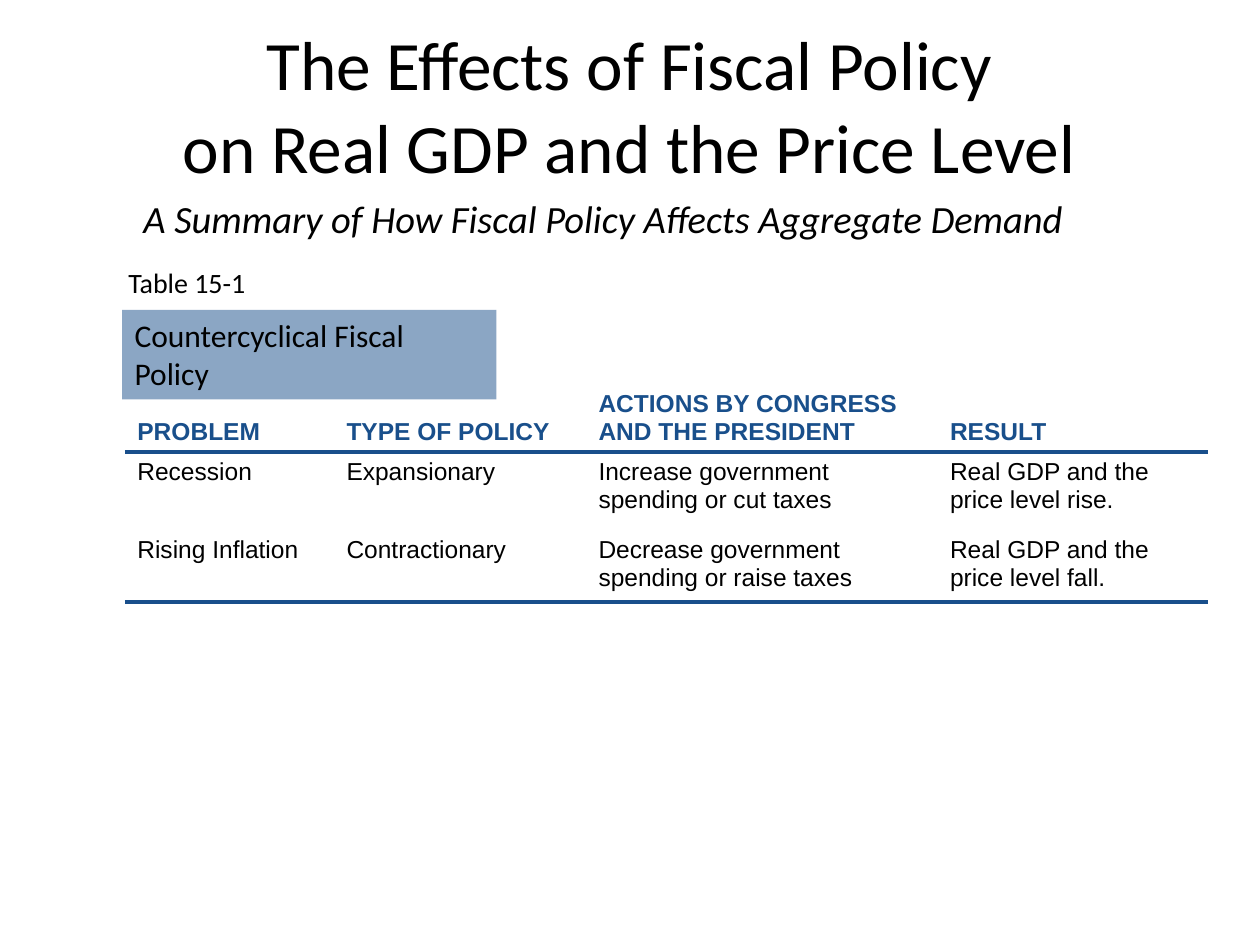
import pptx
import pptx.dml.color
import pptx.enum.shapes
import pptx.enum.text
import pptx.oxml
import pptx.oxml.ns
import pptx.util
from lxml import etree

Inches, Pt = pptx.util.Inches, pptx.util.Pt
ANCHOR = pptx.enum.text.MSO_ANCHOR
BLUE = pptx.dml.color.RGBColor(0x19, 0x4F, 0x8B)
BLACK = pptx.dml.color.RGBColor(0, 0, 0)

TITLE = "The Effects of Fiscal Policy\von Real GDP and the Price Level"
SUBTITLE = "A Summary of How Fiscal Policy Affects Aggregate Demand"
TABLE_NUMBER = "Table 15-1"
BANNER = "Countercyclical Fiscal Policy"
POLICIES = [
    ("PROBLEM", "TYPE OF POLICY", "ACTIONS BY CONGRESS AND THE PRESIDENT", "RESULT"),
    ("Recession", "Expansionary", "Increase government\vspending or cut taxes",
     "Real GDP and the price level rise."),
    ("Rising Inflation", "Contractionary", "Decrease government\vspending or raise taxes",
     "Real GDP and the price level fall."),
]
COLUMN_WIDTHS = (1.66, 2, 2.79, 2.15)
ROW_HEIGHTS = (0.56, 0.62, 0.57)
RULE_WIDTH = Pt(2.25)


def style_text(text_frame, size, name="Calibri", color=BLACK, bold=False, italic=False):
    for paragraph in text_frame.paragraphs:
        for run in paragraph.runs:
            font = run.font
            font.size, font.name = Pt(size), name
            font.bold, font.italic = bold, italic
            font.color.rgb = color


def add_text(slide, box, text, size, **style):
    shape = slide.shapes.add_textbox(*map(Inches, box))
    text_frame = shape.text_frame
    text_frame.word_wrap = True
    text_frame.text = text
    style_text(text_frame, size, **style)
    return text_frame


def add_banner(slide):
    shape = slide.shapes.add_shape(pptx.enum.shapes.MSO_SHAPE.RECTANGLE,
                                   *map(Inches, (0.97, 2.46, 2.97, 0.71)))
    shape.shadow.inherit = False
    shape.line.fill.background()
    shape.fill.solid()
    shape.fill.fore_color.rgb = BLUE
    color = shape.fill._xPr.find(".//" + pptx.oxml.ns.qn("a:srgbClr"))
    etree.SubElement(color, pptx.oxml.ns.qn("a:alpha"), val="50000")
    text_frame = shape.text_frame
    text_frame.word_wrap = True
    text_frame.vertical_anchor = ANCHOR.TOP
    text_frame.text = BANNER
    text_frame.paragraphs[0].alignment = pptx.enum.text.PP_ALIGN.LEFT
    style_text(text_frame, 18)


def set_borders(cell, ruled_sides):
    """Draw a blue rule on the given sides and no line on the others."""
    properties = cell._tc.get_or_add_tcPr()
    for position, side in enumerate(("L", "R", "T", "B")):
        if side in ruled_sides:
            fill = f'<a:solidFill><a:srgbClr val="{BLUE}"/></a:solidFill>'
        else:
            fill = "<a:noFill/>"
        line = pptx.oxml.parse_xml(
            f'<a:ln{side} {pptx.oxml.ns.nsdecls("a")} w="{RULE_WIDTH}">{fill}</a:ln{side}>')
        properties.insert(position, line)


def add_policy_table(slide):
    box = (0.99, 3.02, sum(COLUMN_WIDTHS), sum(ROW_HEIGHTS))
    table = slide.shapes.add_table(len(POLICIES), len(COLUMN_WIDTHS),
                                   *map(Inches, box)).table
    table.horz_banding = False
    for column, width in zip(table.columns, COLUMN_WIDTHS):
        column.width = Inches(width)
    for row, height in zip(table.rows, ROW_HEIGHTS):
        row.height = Inches(height)
    last_row, last_column = len(POLICIES) - 1, len(COLUMN_WIDTHS) - 1
    for row, texts in enumerate(POLICIES):
        is_header = row == 0
        ruled_sides = {0: "B", 1: "T", last_row: "B"}[row]
        for column, text in enumerate(texts):
            cell = table.cell(row, column)
            cell.text_frame.text = text
            style_text(cell.text_frame, 14, "Arial",
                       BLUE if is_header else BLACK, bold=is_header)
            cell.vertical_anchor = ANCHOR.BOTTOM if is_header else ANCHOR.TOP
            if row == last_row or (column == last_column and not is_header):
                cell.margin_right = 0
            cell.fill.background()
            set_borders(cell, ruled_sides)


def main():
    presentation = pptx.Presentation()
    presentation.slide_width, presentation.slide_height = Inches(10), Inches(7.5)
    slide = presentation.slides.add_slide(presentation.slide_layouts[6])

    add_text(slide, (1.04, 1.5, 8.75, 0.42), SUBTITLE, 22, italic=True)
    number = add_text(slide, (0.92, 2.09, 1.8, 0.34), TABLE_NUMBER, 16)
    number.paragraphs[0].line_spacing = 0.9
    add_banner(slide)
    add_policy_table(slide)
    title = add_text(slide, (0.8, 0.45, 8.39, 0.75), TITLE, 39.6)
    title.vertical_anchor = ANCHOR.MIDDLE
    title.paragraphs[0].alignment = pptx.enum.text.PP_ALIGN.CENTER

    presentation.save("out.pptx")


if __name__ == "__main__":
    main()
